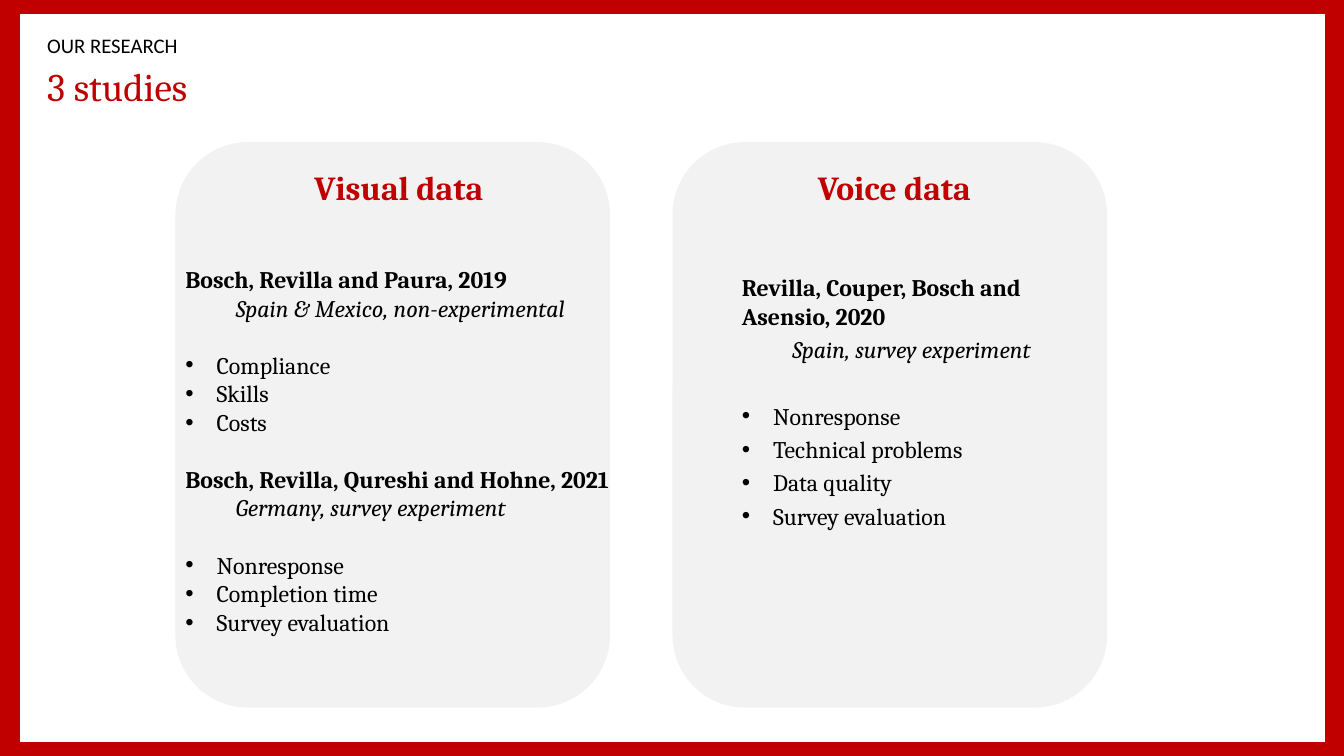
from lxml import etree
from pptx import Presentation
from pptx.dml.color import RGBColor
from pptx.enum.shapes import MSO_SHAPE
from pptx.enum.text import MSO_ANCHOR, PP_ALIGN
from pptx.oxml.ns import qn
from pptx.util import Inches, Pt

RECT = MSO_SHAPE.RECTANGLE
ROUND = MSO_SHAPE.ROUNDED_RECTANGLE
MIDDLE = MSO_ANCHOR.MIDDLE
CENTER = PP_ALIGN.CENTER
COLORS = {"red": "C00000", "white": "FFFFFF", "card": "F2F2F2", "black": "000000"}
HEAD, BODY = 24, 17
LINE = 1.2

VISUAL = [
    ("Bosch, Revilla and Paura, 2019", "Spain & Mexico, non-experimental",
     ["Compliance", "Skills", "Costs"]),
    ("Bosch, Revilla, Qureshi and Hohne, 2021", "Germany, survey experiment",
     ["Nonresponse", "Completion time", "Survey evaluation"]),
]
VOICE = [
    ("Revilla, Couper, Bosch and Asensio, 2020", "Spain, survey experiment",
     ["Nonresponse", "Technical problems", "Data quality", "Survey evaluation"]),
]


def add_panel(slide, kind, box, color):
    panel = slide.shapes.add_shape(kind, *map(Inches, box))
    panel.shadow.inherit = False
    panel.fill.solid()
    panel.fill.fore_color.rgb = RGBColor.from_string(COLORS[color])
    panel.line.fill.background()


def add_frame(slide, box):
    frame = slide.shapes.add_textbox(*map(Inches, box)).text_frame
    frame.word_wrap = True
    return frame


def style(para, size, color="black", face="Cambria", bold=False, italic=False):
    for run in para.runs:
        font = run.font
        font.name, font.size = face, Pt(size)
        font.bold, font.italic = bold, italic
        font.color.rgb = RGBColor.from_string(COLORS[color])


def add_line(frame, text, left, before, bullet=False, **look):
    para = frame.add_paragraph()
    para.text = text
    props = para._p.get_or_add_pPr()
    props.set("marL", str(Inches(left)))
    if bullet:
        props.set("indent", str(Inches(-0.31)))
        etree.SubElement(props, qn("a:buFont")).set("typeface", "Arial")
        etree.SubElement(props, qn("a:buChar")).set("char", "•")
    para.space_before = Pt(before)
    style(para, BODY, **look)


def add_header(slide, left, top):
    rows = [("OUR RESEARCH", 0, 11.28, 0.31, 14.8, "black", "Calibri", 0.8),
            ("3 studies", 0.33, 11.67, 0.47, 28, "red", "Cambria", 0.9)]
    for text, down, width, height, size, color, face, space in rows:
        frame = add_frame(slide, (left, top + down, width, height))
        frame.vertical_anchor = MIDDLE
        para = frame.paragraphs[0]
        para.text = text
        para.line_spacing = space
        style(para, size, color, face)


def add_card(slide, box, inset, width, title, studies, margin, step, gap):
    left, top, _, _ = box
    add_panel(slide, ROUND, box, "card")
    frame = add_frame(slide, (left + inset, top + 0.2, width, 2.28))
    head = frame.paragraphs[0]
    head.text = title
    head.alignment = CENTER
    style(head, HEAD, "red", bold=True)
    blank = BODY * LINE + step
    for i, (name, design, topics) in enumerate(studies):
        add_line(frame, name, margin, blank if i else gap, bold=True)
        add_line(frame, design, margin + 0.5, step, italic=True)
        for j, topic in enumerate(topics):
            before = step if j else blank + step
            add_line(frame, topic, margin + 0.31, before, bullet=True)


def main():
    deck = Presentation()
    deck.slide_width, deck.slide_height = Inches(13.33), Inches(7.5)
    slide = deck.slides.add_slide(deck.slide_layouts[6])
    add_panel(slide, RECT, (0, 0, 13.33, 7.5), "red")
    add_panel(slide, RECT, (0.2, 0.14, 12.94, 7.22), "white")
    add_header(slide, 0.37, 0.32)
    add_card(slide, (1.74, 1.41, 4.31, 5.61), 0, 4.43, "Visual data", VISUAL,
             margin=0, step=0, gap=40.8)
    add_card(slide, (6.67, 1.41, 4.31, 5.61), 0.28, 3.84, "Voice data", VOICE,
             margin=0.31, step=3.4, gap=46.6)
    deck.save("out.pptx")


if __name__ == "__main__":
    main()
